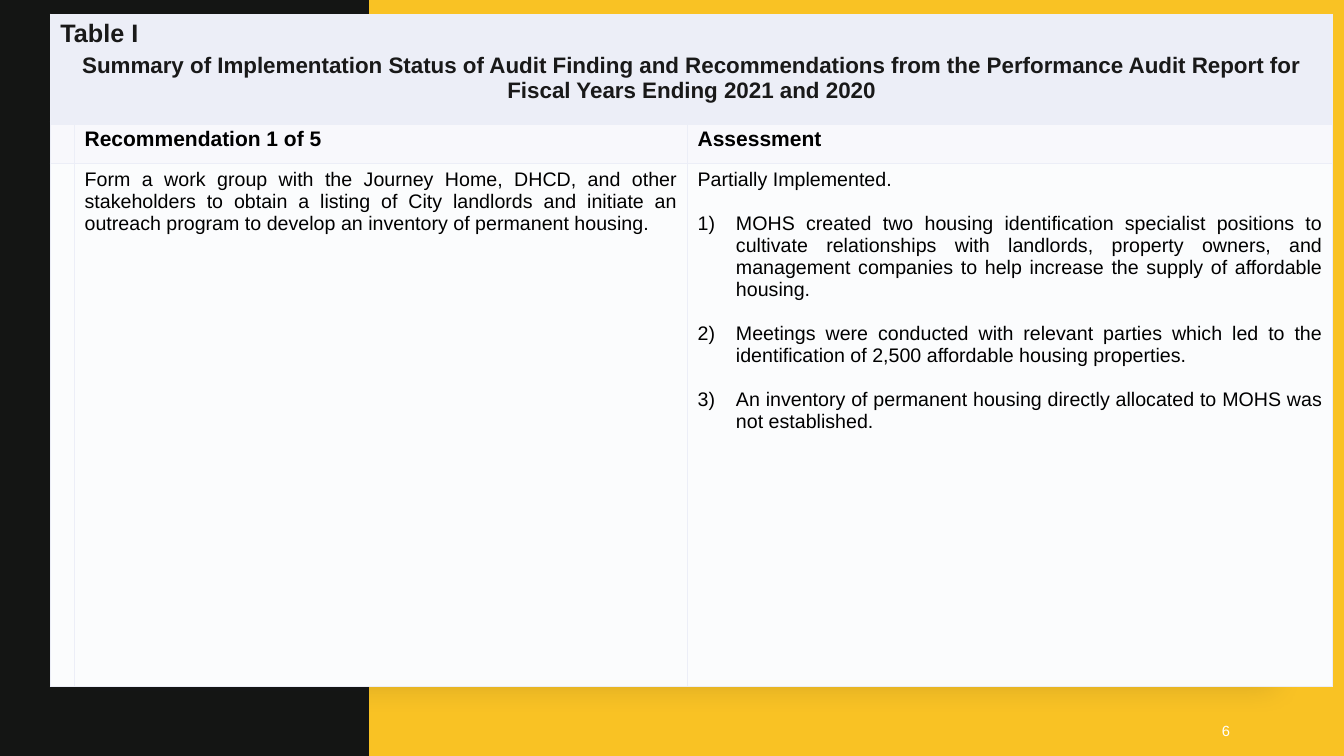
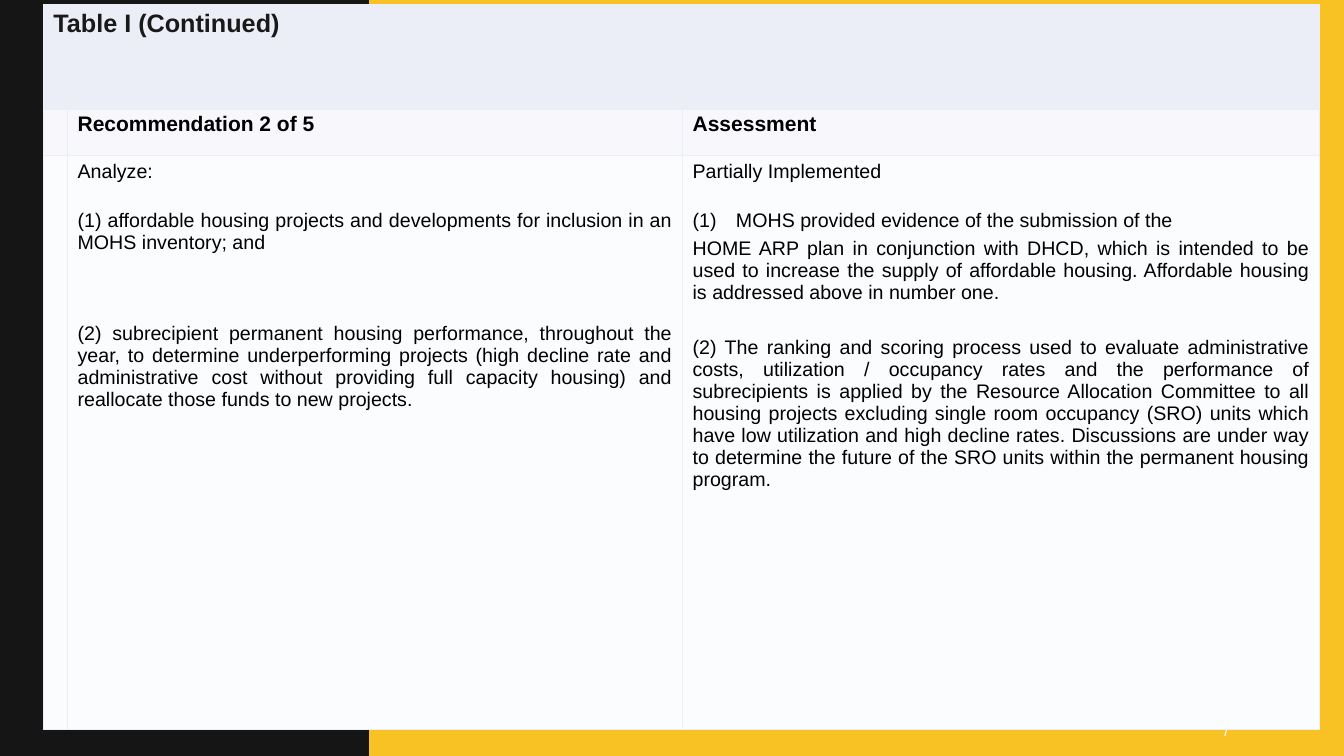
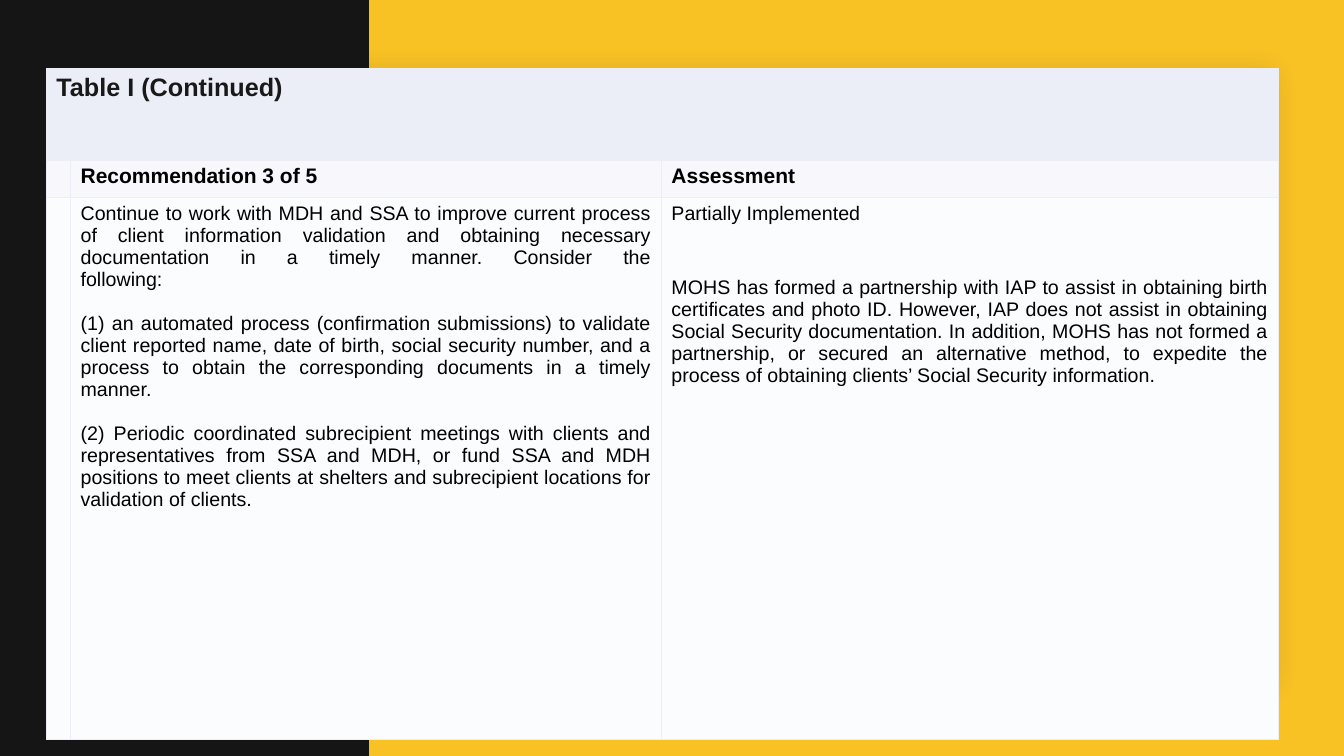
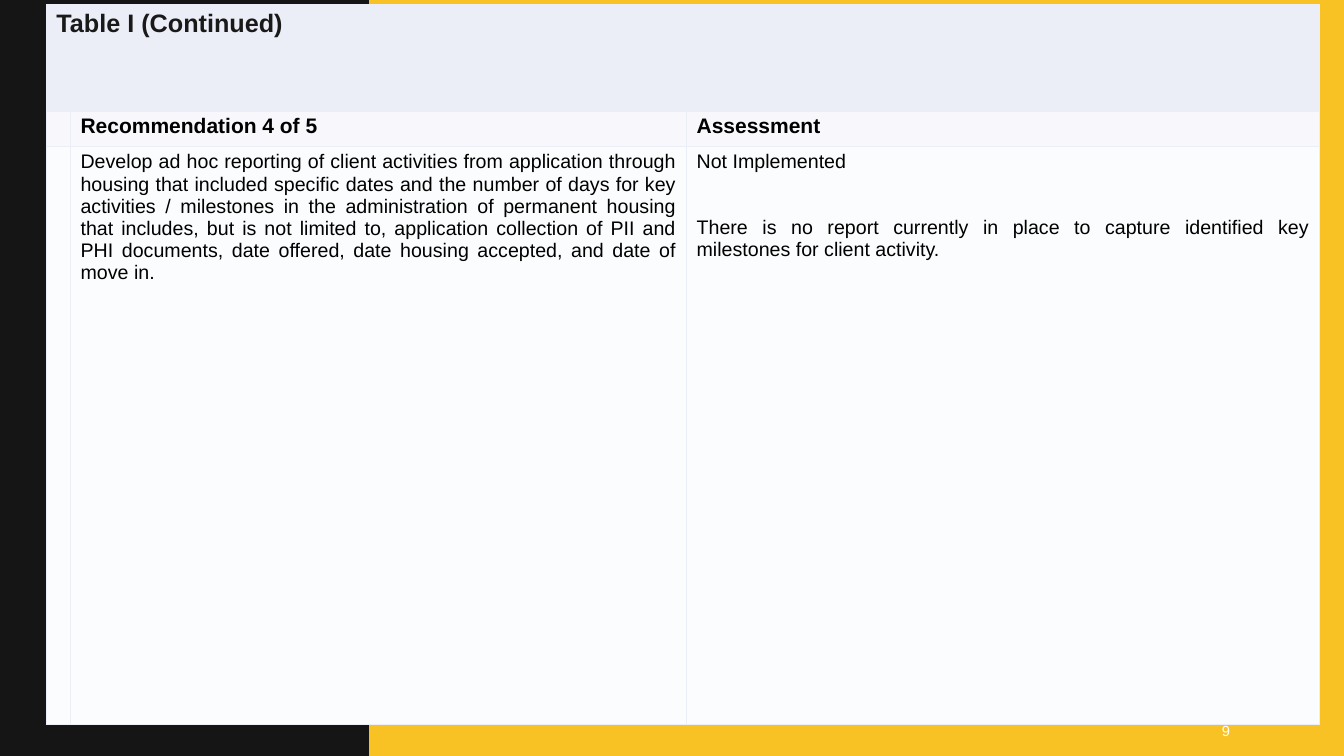
"""Builds four slides with tables of audit recommendations and their assessments."""
from copy import deepcopy

from pptx import Presentation
from pptx import util as u
from pptx.dml.color import RGBColor
from pptx.enum import shapes, text
from pptx.oxml import parse_xml
from pptx.oxml.ns import nsdecls, qn

GOLD, BLACK, PALE, WHITE = "F9C224", "141514", "F6F9FF", "FFFFFF"
EDGE, HEAD, BODY, INK = "ECEEF7", "F8F8FC", "FBFCFD", "191919"
LEFT, MID, JUST = text.PP_ALIGN.LEFT, text.PP_ALIGN.CENTER, text.PP_ALIGN.JUSTIFY
LINE = 15.65


def paint(item, color):
    """Gives a shape, cell, font or background a solid colour."""
    item.fill.solid()
    item.fill.fore_color.rgb = RGBColor.from_string(color)


def write(frame, words, size=14, color="000000", bold=False, align=LEFT,
          after=0, num=None, hang=0.38):
    """Adds one paragraph, using the first one while it is empty."""
    para = frame.paragraphs[0]
    if para.runs:
        para = frame.add_paragraph()
    para.text = words
    para.alignment = align
    para.space_after = u.Pt(after)
    for run in para.runs:
        run.font.name = "Arial"
        run.font.size = u.Pt(size)
        run.font.bold = bold
        paint(run.font, color)
    for gap in para._p.findall(qn("a:br")):
        gap.append(deepcopy(para.runs[0]._r.rPr))
    if num:
        props = para._p.get_or_add_pPr()
        props.set("marL", str(u.Inches(hang)))
        props.set("indent", str(-u.Inches(hang)))
        props.append(parse_xml(f'<a:buAutoNum {nsdecls("a")} type="{num}"/>'))


tables = [
    dict(
        page="6", at=(0.5, 0.14), cols=(0.23, 6.08, 6.4), rows=(1.08, 0.4, 5.19),
        title="Table I",
        sub="Summary of Implementation Status of Audit Finding and Recommendations "
            "from the Performance Audit Report for Fiscal Years Ending 2021 and 2020",
        left=[dict(words="Form a work group with the Journey Home, DHCD, and other "
                   "stakeholders to obtain a listing of City landlords and initiate an "
                   "outreach program to develop an inventory of permanent housing.")],
        right=[
            dict(words="Partially Implemented.", after=LINE),
            dict(words="MOHS created two housing identification specialist positions to "
                 "cultivate relationships with landlords, property owners, and management "
                 "companies to help increase the supply of affordable housing.",
                 after=LINE, num="arabicParenR"),
            dict(words="Meetings were conducted with relevant parties which led to the "
                 "identification of 2,500 affordable housing properties.",
                 after=LINE, num="arabicParenR"),
            dict(words="An inventory of permanent housing directly allocated to MOHS was "
                 "not established.", num="arabicParenR"),
        ]),
    dict(
        page="7", at=(0.43, 0.05), cols=(0.24, 6.1, 6.32), rows=(1.02, 0.47, 5.7),
        title="Table I (Continued)",
        left=[
            dict(words="Analyze:", after=LINE + 4),
            dict(words="(1) affordable housing projects and developments for inclusion in "
                 "an MOHS inventory; and", after=3 * LINE + 2),
            dict(words="(2) subrecipient permanent housing performance, throughout the "
                 "year, to determine underperforming projects (high decline rate and "
                 "administrative cost without providing full capacity housing) and "
                 "reallocate those funds to new projects."),
        ],
        right=[
            dict(words="Partially Implemented", after=LINE + 4),
            dict(words="MOHS provided evidence of the submission of the", after=4,
                 num="arabicParenBoth", hang=0.43),
            dict(words="HOME ARP plan in conjunction with DHCD, which is intended to be "
                 "used to increase the supply of affordable housing. Affordable housing is "
                 "addressed above in number one.", after=LINE + 8),
            dict(words="(2) The ranking and scoring process used to evaluate administrative "
                 "costs, utilization / occupancy rates and the performance of subrecipients "
                 "is applied by the Resource Allocation Committee to all housing projects "
                 "excluding single room occupancy (SRO) units which have low utilization "
                 "and high decline rates. Discussions are under way to determine the future "
                 "of the SRO units within the permanent housing program."),
        ]),
    dict(
        at=(0.46, 0.68), cols=(0.24, 5.86, 6.12), rows=(0.9, 0.38, 5.38),
        title="Table I (Continued)",
        left=[
            dict(words="Continue to work with MDH and SSA to improve current process of "
                 "client information validation and obtaining necessary documentation in a "
                 "timely manner. Consider the\vfollowing:", after=LINE),
            dict(words="(1) an automated process (confirmation submissions) to validate "
                 "client reported name, date of birth, social security number, and a "
                 "process to obtain the corresponding documents in a timely manner.",
                 after=LINE),
            dict(words="(2) Periodic coordinated subrecipient meetings with clients and "
                 "representatives from SSA and MDH, or fund SSA and MDH positions to meet "
                 "clients at shelters and subrecipient locations for validation of "
                 "clients."),
        ],
        right=[
            dict(words="Partially Implemented", after=2 * LINE + 6),
            dict(words="MOHS has formed a partnership with IAP to assist in obtaining birth "
                 "certificates and photo ID. However, IAP does not assist in obtaining "
                 "Social Security documentation. In addition, MOHS has not formed a "
                 "partnership, or secured an alternative method, to expedite the process "
                 "of obtaining clients’ Social Security information."),
        ]),
    dict(
        page="9", at=(0.46, 0.05), cols=(0.23, 6.11, 6.28), rows=(1.04, 0.36, 5.74),
        title="Table I (Continued)",
        left=[dict(words="Develop ad hoc reporting of client activities from application "
                   "through housing that included specific dates and the number of days for "
                   "key activities / milestones in the administration of permanent housing "
                   "that includes, but is not limited to, application collection of PII and "
                   "PHI documents, date offered, date housing accepted, and date of move "
                   "in.")],
        right=[
            dict(words="Not Implemented", after=2 * LINE),
            dict(words="There is no report currently in place to capture identified key "
                 "milestones for client activity."),
        ]),
]

deck = Presentation()
deck.slide_width, deck.slide_height = u.Inches(13.33), u.Inches(7.5)

for count, data in enumerate(tables, 1):
    slide = deck.slides.add_slide(deck.slide_layouts[6])
    paint(slide.background, GOLD)

    for box, color in (((0, 0, 3.66, 7.5), BLACK), ((0.69, 0.69, 11.94, 6.11), PALE)):
        panel = slide.shapes.add_shape(shapes.MSO_SHAPE.RECTANGLE, *map(u.Inches, box))
        paint(panel, color)
        panel.line.fill.background()
        panel.shadow.inherit = False
    panel._element.spPr.find(qn("a:effectLst")).append(parse_xml(
        f'<a:outerShdw {nsdecls("a")} blurRad="{u.Pt(20)}" dist="{u.Pt(2)}" dir="2700000">'
        '<a:srgbClr val="1F2125"><a:alpha val="15000"/></a:srgbClr></a:outerShdw>'))

    if "page" in data:
        foot = slide.shapes.add_textbox(*map(u.Inches, (12.02, 7.05, 0.85, 0.4))).text_frame
        foot.word_wrap = True
        foot.vertical_anchor = text.MSO_ANCHOR.MIDDLE
        write(foot, data["page"], size=10.5, color=WHITE)

    size = sum(data["cols"]), sum(data["rows"])
    grid = slide.shapes.add_table(3, 3, *map(u.Inches, data["at"] + size)).table
    for col, width in zip(grid.columns, data["cols"]):
        col.width = u.Inches(width)
    for row, height, color in zip(grid.rows, data["rows"], (EDGE, HEAD, BODY)):
        row.height = u.Inches(height)
        for cell in row.cells:
            props = cell._tc.get_or_add_tcPr()
            for side in "LRTB":
                wide = 3 if color == EDGE and side == "B" else 1
                props.append(parse_xml(
                    f'<a:ln{side} {nsdecls("a")} w="{u.Pt(wide)}"><a:solidFill>'
                    f'<a:srgbClr val="{EDGE}"/></a:solidFill></a:ln{side}>'))
            paint(cell, color)
        if color != EDGE:
            row.cells[0].margin_top = row.cells[0].margin_bottom = 0

    grid.cell(0, 0).merge(grid.cell(0, 2))
    top = grid.cell(0, 0).text_frame
    write(top, data["title"], size=18, color=INK, bold=True, after=4)
    if "sub" in data:
        write(top, data["sub"], size=16, color=INK, bold=True, align=MID)
    for col, label, side in ((1, f"Recommendation {count} of 5", "left"),
                             (2, "Assessment", "right")):
        write(grid.cell(1, col).text_frame, label, size=15, bold=True)
        for part in data[side]:
            write(grid.cell(2, col).text_frame, align=JUST, **part)

deck.save("out.pptx")
